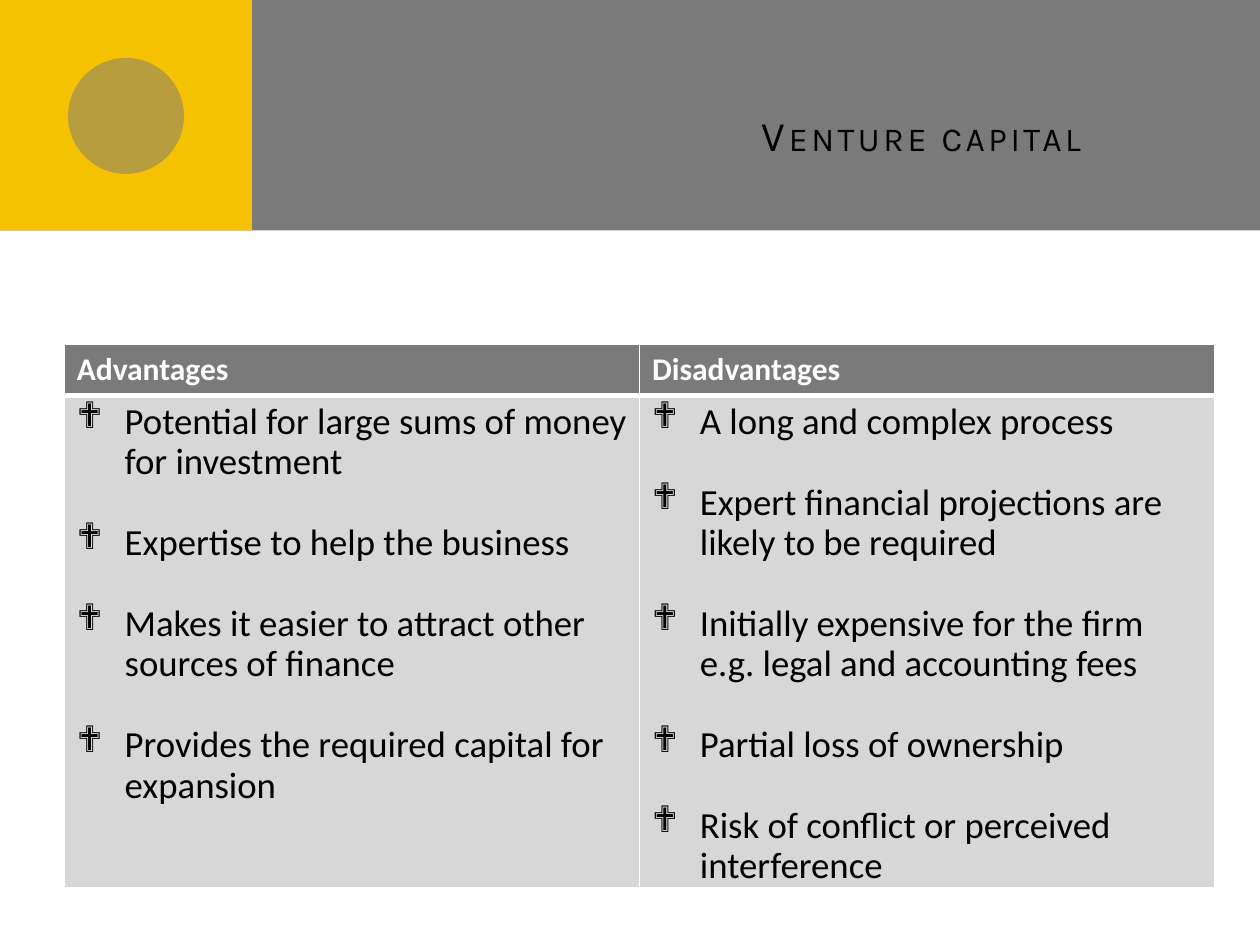
"""Build the venture capital slide with its table of pros and cons."""
from lxml import etree
from pptx import Presentation
from pptx.dml.color import RGBColor
from pptx.enum.shapes import MSO_SHAPE
from pptx.enum.text import MSO_ANCHOR, PP_ALIGN
from pptx.oxml.ns import qn
from pptx.util import Inches, Pt

RECT, OVAL = MSO_SHAPE.RECTANGLE, MSO_SHAPE.OVAL
MIDDLE, RIGHT = MSO_ANCHOR.MIDDLE, PP_ALIGN.RIGHT

TITLE = "Venture capital"
POINTS = {
    "Advantages": [
        "Potential for large sums of money for investment",
        "Expertise to help the business",
        "Makes it easier to attract other sources of finance",
        "Provides the required capital for expansion",
    ],
    "Disadvantages": [
        "A long and complex process",
        "Expert financial projections are likely to be required",
        "Initially expensive for the firm e.g. legal and accounting fees",
        "Partial loss of ownership",
        "Risk of conflict or perceived interference",
    ],
}
COLORS = {"gray": "7A7A7A", "gold": "F5C201", "pale": "D7D7D7",
          "white": "FFFFFF", "black": "000000"}
BANNER = [
    (RECT, (0, 0, 10, 1.83), "gray", 100),
    (RECT, (0, 0, 2, 1.83), "gold", 100),
    (OVAL, (0.54, 0.46, 0.92, 0.92), "gray", 50),
]
ROWS = (0.41, 3.88)
INDENT = 0.38
GAP = 23.1


def paint(fill, color):
    fill.solid()
    fill.fore_color.rgb = RGBColor.from_string(COLORS[color])


def add_run(para, text, font, size, color, bold=False):
    run = para.add_run()
    run.text = text
    run.font.name, run.font.size, run.font.bold = font, Pt(size), bold
    paint(run.font.fill, color)
    return run


def add_shape(slide, kind, box, color, alpha):
    shape = slide.shapes.add_shape(kind, *map(Inches, box))
    shape.shadow.inherit = False
    shape.line.fill.background()
    paint(shape.fill, color)
    if alpha < 100:
        tint = shape.fill._xPr.find(".//" + qn("a:srgbClr"))
        etree.SubElement(tint, qn("a:alpha"), val=str(alpha * 1000))


def add_title(slide):
    frame = slide.shapes.add_textbox(*map(Inches, (2.67, 0.25, 6.83, 1.25))).text_frame
    frame.word_wrap = True
    frame.vertical_anchor = MIDDLE
    frame.margin_top, frame.margin_right = Inches(0.44), Inches(0.5)
    para = frame.paragraphs[0]
    para.alignment = RIGHT
    props = add_run(para, TITLE, "Karla", 24, "black")._r.get_or_add_rPr()
    props.set("cap", "small")
    props.set("spc", "200")


def add_edges(cell, widths):
    props = cell._tc.get_or_add_tcPr()
    for spot, (side, width) in enumerate(zip("LRTB", widths)):
        line = etree.Element(qn("a:ln" + side), w=str(Pt(width)))
        fill = etree.SubElement(line, qn("a:solidFill"))
        etree.SubElement(fill, qn("a:srgbClr"), val=COLORS["white"])
        props.insert(spot, line)


def add_bullet(para, first):
    para.line_spacing = 0.9
    para.space_before = Pt(0 if first else GAP)
    props = para._p.get_or_add_pPr()
    props.set("marL", str(Inches(INDENT)))
    props.set("indent", str(-Inches(INDENT)))
    etree.SubElement(props, qn("a:buFont"), typeface="Wingdings")
    etree.SubElement(props, qn("a:buChar"), char="❖")


def add_points(slide):
    table = slide.shapes.add_table(
        2, len(POINTS), *map(Inches, (0.51, 2.73, 9.13, sum(ROWS)))).table
    for row, height in zip(table.rows, ROWS):
        row.height = Inches(height)
    for col, (head, items) in enumerate(POINTS.items()):
        top, body = table.cell(0, col), table.cell(1, col)
        paint(top.fill, "gray")
        paint(body.fill, "pale")
        add_edges(top, (1, 1, 1, 3))
        add_edges(body, (1, 1, 3, 1))
        add_run(top.text_frame.paragraphs[0], head, "Calibri", 18, "white", True)
        frame = body.text_frame
        for spot, item in enumerate(items):
            para = frame.add_paragraph() if spot else frame.paragraphs[0]
            add_bullet(para, spot == 0)
            add_run(para, item, "Calibri", 21, "black")


def main():
    deck = Presentation()
    deck.slide_width, deck.slide_height = Inches(10), Inches(7.5)
    slide = deck.slides.add_slide(deck.slide_layouts[6])
    for part in BANNER:
        add_shape(slide, *part)
    add_title(slide)
    add_points(slide)
    deck.save("out.pptx")


if __name__ == "__main__":
    main()
